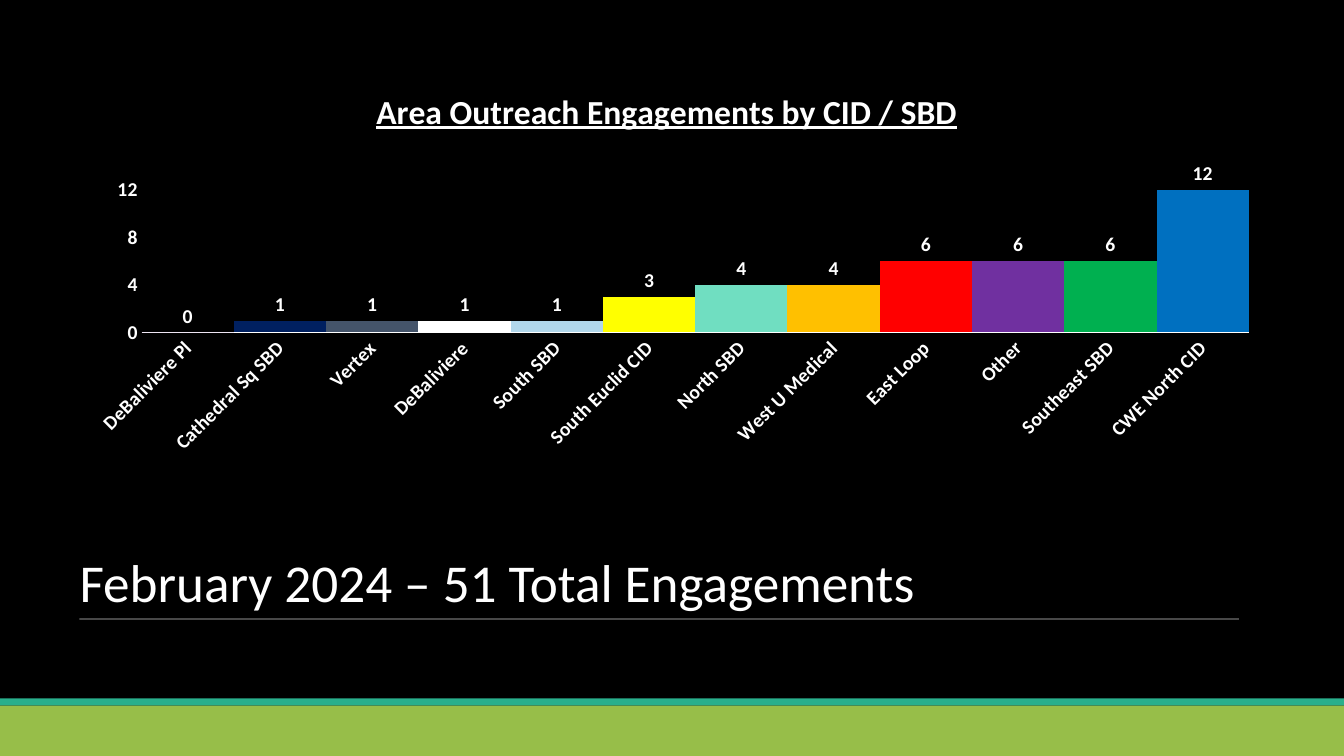
from lxml import etree
from pptx import Presentation, util as u
from pptx.chart.data import CategoryChartData
from pptx.dml.color import RGBColor
from pptx.enum import chart as ce, shapes, text
from pptx.oxml import parse_xml
from pptx.oxml.ns import nsdecls, qn

THEME = {
    "black": "000000", "white": "FFFFFF", "teal": "29AF8C", "green": "97BE49",
    "rule": "E7E6E6", "font": "Calibri",
    "title": 38, "chart_title": 24, "label": 14, "chart": 10,
}
ENGAGEMENTS = [
    ("DeBaliviere Pl", 0, "7030A0"),
    ("Cathedral Sq SBD", 1, "002060"),
    ("Vertex", 1, "44546A"),
    ("DeBaliviere", 1, "FFFFFF"),
    ("South SBD", 1, "B1D7EB"),
    ("South Euclid CID", 3, "FFFF00"),
    ("North SBD", 4, "70DEC1"),
    ("West U Medical", 4, "FFC000"),
    ("East Loop", 6, "FF0000"),
    ("Other", 6, "7030A0"),
    ("Southeast SBD", 6, "00B050"),
    ("CWE North CID", 12, "0070C0"),
]


def style(font, size, **more):
    for key, value in {"name": THEME["font"], "size": u.Pt(size), **more}.items():
        setattr(font, key, value)
    font.color.rgb = RGBColor.from_string(THEME["white"])


def layout(**fractions):
    modes = "".join(f'<c:{k}Mode val="edge"/>' for k in "xy")
    values = "".join(f'<c:{k} val="{v}"/>' for k, v in fractions.items())
    target = '<c:layoutTarget val="inner"/>' if "w" in fractions else ""
    return parse_xml(f'<c:layout {nsdecls("c")}><c:manualLayout>{target}{modes}{values}'
                     '</c:manualLayout></c:layout>')


prs = Presentation()
prs.slide_width, prs.slide_height = u.Cm(33.87), u.Cm(19.05)
s = prs.slides.add_slide(prs.slide_layouts[5])
s.background.fill.solid()
s.background.fill.fore_color.rgb = RGBColor.from_string(THEME["black"])

for top, height, color in [(0, 17.6, "black"), (17.6, 0.18, "teal"), (17.78, 1.27, "green")]:
    sp = s.shapes.add_shape(shapes.MSO_SHAPE.RECTANGLE, 0, u.Cm(top), prs.slide_width, u.Cm(height))
    sp.shadow.inherit = False
    sp.fill.solid()
    sp.fill.fore_color.rgb = RGBColor.from_string(THEME[color])
    sp.line.fill.background()

title = s.shapes.title
for key, value in {"left": 1.75, "top": 12.65, "width": 30.3, "height": 2.95}.items():
    setattr(title, key, u.Cm(value))
s.shapes._spTree.append(title._element)
tf = title.text_frame
tf.text = "February 2024 – 51 Total Engagements"
tf.vertical_anchor = text.MSO_ANCHOR.BOTTOM
p = tf.paragraphs[0]
p.alignment, p.line_spacing = text.PP_ALIGN.LEFT, 0.9
style(p.runs[0].font, THEME["title"])

rule = s.shapes.add_connector(shapes.MSO_CONNECTOR.STRAIGHT, u.Cm(2), u.Cm(15.6), u.Cm(31.22), u.Cm(15.6))
rule.line.width = u.Pt(0.5)
rule.line.color.rgb = RGBColor.from_string(THEME["rule"])
etree.SubElement(rule._element.spPr.find(".//" + qn("a:srgbClr")), qn("a:alpha"), val="90000")
etree.SubElement(rule._element.spPr, qn("a:effectLst"))

data = CategoryChartData()
data.categories = [name for name, _, _ in ENGAGEMENTS]
data.add_series("Series 1", [count for _, count, _ in ENGAGEMENTS])
chart = s.shapes.add_chart(ce.XL_CHART_TYPE.COLUMN_CLUSTERED, u.Cm(1.75), u.Cm(1.78),
                           u.Cm(30.33), u.Cm(10), data).chart
chart.has_legend = False
style(chart.font, THEME["chart"])

tf = chart.chart_title.text_frame
tf.text = "Area Outreach Engagements by CID / SBD"
style(tf.paragraphs[0].runs[0].font, THEME["chart_title"], bold=True, underline=True)
chart.chart_title.include_in_layout = False
chart_title = chart.chart_title._element
for old in chart_title.findall(qn("c:layout")):
    chart_title.remove(old)
chart_title.find(qn("c:tx")).addnext(layout(x=0.25, y=0.03))

plot_area = chart._chartSpace.chart.plotArea
for old in plot_area.findall(qn("c:layout")):
    plot_area.remove(old)
plot_area.insert(0, layout(x=0.06, y=0.24, w=0.92, h=0.42))

for axis in (chart.category_axis, chart.value_axis):
    for key, value in {"has_major_gridlines": False, "major_tick_mark": ce.XL_TICK_MARK.NONE,
                       "minor_tick_mark": ce.XL_TICK_MARK.NONE}.items():
        setattr(axis, key, value)
    style(axis.tick_labels.font, THEME["label"], bold=True)
line = chart.category_axis.format.line
line.width = u.Pt(0.75)
line.color.rgb = RGBColor.from_string(THEME["white"])
chart.category_axis._element.txPr.bodyPr.set("rot", "-2700000")
for key, value in {"minimum_scale": 0, "maximum_scale": 14, "major_unit": 2}.items():
    setattr(chart.value_axis, key, value)
chart.value_axis.format.line.fill.background()

plot = chart.plots[0]
for key, value in {"gap_width": 0, "overlap": -27, "vary_by_categories": False,
                   "has_data_labels": True}.items():
    setattr(plot, key, value)
labels = plot.data_labels
labels.show_value, labels.position = True, ce.XL_LABEL_POSITION.OUTSIDE_END
style(labels.font, THEME["label"], bold=True)
for i, (_, _, color) in enumerate(ENGAGEMENTS):
    fill = plot.series[0].points[i].format.fill
    fill.solid()
    fill.fore_color.rgb = RGBColor.from_string(color)

prs.save("out.pptx")
